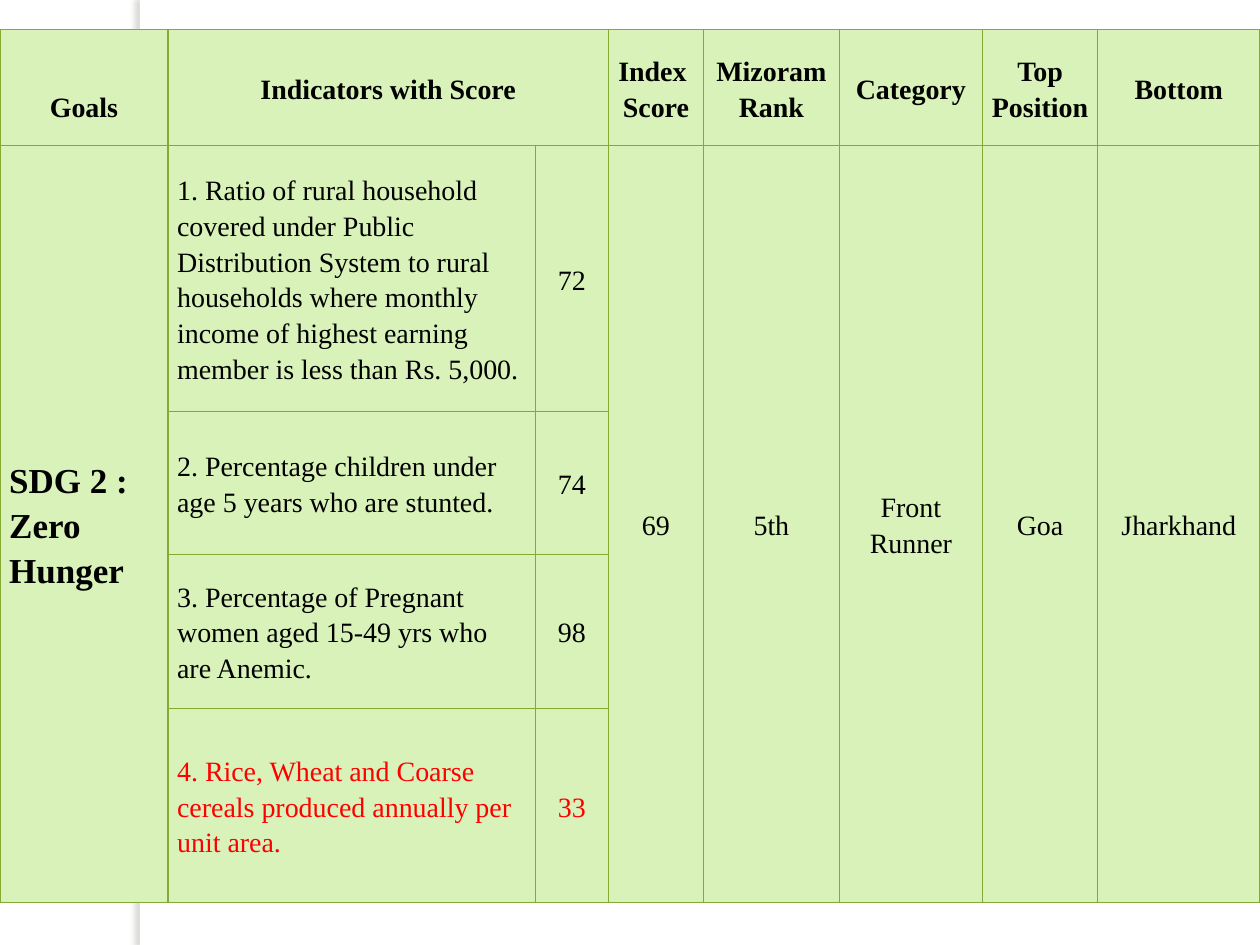
from lxml.etree import SubElement
from pptx import Presentation
from pptx.dml.color import RGBColor
from pptx.enum.shapes import MSO_SHAPE as Shape
from pptx.enum.text import MSO_ANCHOR as Anchor, PP_ALIGN as Align
from pptx.oxml import parse_xml
from pptx.oxml.ns import nsdecls, qn
from pptx.util import Pt

WHITE = RGBColor(0xFF, 0xFF, 0xFF)
BLACK = RGBColor(0, 0, 0)
RED = RGBColor(0xFF, 0, 0)
PALE_GREEN = RGBColor(0xD8, 0xF2, 0xB9)
GREEN = RGBColor(0x84, 0xAA, 0x33)
SHADOW = RGBColor(0x73, 0x6F, 0x63)
FONT = "Times New Roman"

COLUMN_WIDTHS = [96, 210, 41.7, 54.3, 77.7, 81.7, 66, 92.6]
ROW_HEIGHTS = [66, 152, 81.7, 88, 111]
ROWS = [
    ["Goals", "Indicators with Score", "", "Index  Score", "Mizoram Rank",
     "Category", "Top Position", "Bottom"],
    ["SDG 2 : Zero Hunger",
     "1. Ratio of rural household covered under Public Distribution System to rural "
     "households where monthly income of highest earning member is less than Rs. 5,000.",
     "72", "69", "5th", "Front Runner", "Goa", "Jharkhand"],
    ["", "2. Percentage children under age 5 years who are stunted.", "74"],
    ["", "3. Percentage of Pregnant women aged 15-49 yrs who are Anemic.", "98"],
    ["", "4. Rice, Wheat and Coarse cereals produced annually per unit area.", "33"],
]


def add_borders(cell):
    properties = cell._tc.get_or_add_tcPr()
    for index, side in enumerate(["lnL", "lnR", "lnT", "lnB"]):
        properties.insert(index, parse_xml(
            f'<a:{side} {nsdecls("a")} w="{Pt(0.75)}"><a:solidFill>'
            f'<a:srgbClr val="{GREEN}"/></a:solidFill></a:{side}>'))


deck = Presentation()
deck.slide_width, deck.slide_height = Pt(720), Pt(540)
page = deck.slides.add_slide(deck.slide_layouts[6])
page.background.fill.solid()
page.background.fill.fore_color.rgb = WHITE

strip = page.shapes.add_shape(Shape.RECTANGLE, Pt(80), Pt(0), Pt(5.76), Pt(540))
strip.fill.solid()
strip.fill.fore_color.rgb = WHITE
strip.line.fill.background()
strip.shadow.inherit = False
effects = strip._element.spPr.find(qn("a:effectLst"))
shade = SubElement(effects, qn("a:outerShdw"), blurRad=str(Pt(3)), dist=str(Pt(3)),
                   dir="10800000", algn="tl", rotWithShape="0")
tint = SubElement(shade, qn("a:srgbClr"), val=str(SHADOW))
SubElement(tint, qn("a:alpha"), val="25000")

table = page.shapes.add_table(len(ROW_HEIGHTS), len(COLUMN_WIDTHS), Pt(0), Pt(17),
                              Pt(sum(COLUMN_WIDTHS)), Pt(sum(ROW_HEIGHTS))).table
for column, width in zip(table.columns, COLUMN_WIDTHS):
    column.width = Pt(width)
for row, height in zip(table.rows, ROW_HEIGHTS):
    row.height = Pt(height)

for cell in table.iter_cells():
    cell.fill.solid()
    cell.fill.fore_color.rgb = PALE_GREEN
    cell.vertical_anchor = Anchor.MIDDLE
    cell.margin_left = cell.margin_right = Pt(5.25)
    cell.margin_top = cell.margin_bottom = Pt(0)
    add_borders(cell)

table.cell(0, 1).merge(table.cell(0, 2))
for column in [0, 3, 4, 5, 6, 7]:
    table.cell(1, column).merge(table.cell(4, column))
table.cell(0, 0).margin_top = Pt(20.5)

for row, texts in enumerate(ROWS):
    for column, text in enumerate(texts):
        if not text:
            continue
        is_goal = row == 1 and column == 0
        para = table.cell(row, column).text_frame.paragraphs[0]
        para.alignment = Align.LEFT if row and column < 2 else Align.CENTER
        para.line_spacing = 1.15
        span = para.add_run()
        span.text = text
        span.font.name = FONT
        span.font.size = Pt(20 if is_goal else 16)
        span.font.bold = row == 0 or is_goal
        span.font.color.rgb = RED if row == 4 else BLACK

deck.save("out.pptx")
